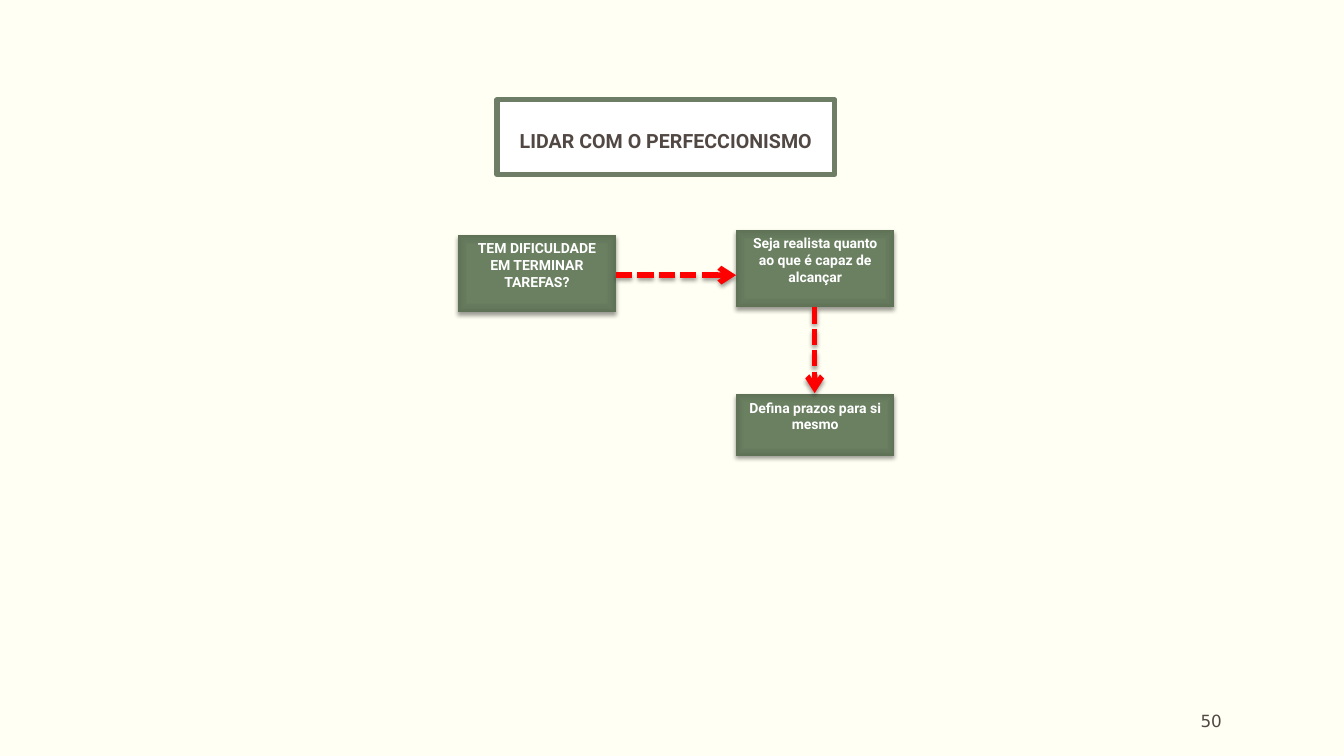
from lxml.etree import SubElement
from pptx import Presentation
from pptx.dml.color import RGBColor
from pptx.enum.dml import MSO_LINE
from pptx.enum.shapes import MSO_CONNECTOR, MSO_SHAPE
from pptx.enum.text import MSO_ANCHOR, MSO_AUTO_SIZE, PP_ALIGN
from pptx.oxml import parse_xml
from pptx.oxml.ns import nsdecls, qn
from pptx.util import Inches, Pt

COLORS = {
    "background": "FFFFF3", "white": "FFFFFF", "text": "514843",
    "frame": "6D7D66", "arrow": "FF0000", "shadow": "000000",
    "box_center": "6B8162", "box_middle": "6A8061", "box_edge": "5F7256",
}


def write_text(shape, text, size, color, font="Roboto", bold=True,
               align=PP_ALIGN.CENTER, anchor=MSO_ANCHOR.TOP):
    frame = shape.text_frame
    frame.word_wrap = True
    frame.auto_size = MSO_AUTO_SIZE.NONE
    frame.vertical_anchor = anchor
    paragraph = frame.paragraphs[0]
    paragraph.alignment = align
    run = paragraph.add_run()
    run.text = text
    run.font.name = font
    run.font.size = Pt(size)
    run.font.bold = bold
    run.font.color.rgb = RGBColor.from_string(COLORS[color])


def add_shadow(shape):
    shape._element.spPr.append(parse_xml(
        f'<a:effectLst {nsdecls("a")}>'
        f'<a:outerShdw blurRad="{Pt(3.1)}" dist="{Pt(2)}" dir="5400000" rotWithShape="0">'
        f'<a:srgbClr val="{COLORS["shadow"]}"><a:alpha val="38000"/></a:srgbClr>'
        '</a:outerShdw></a:effectLst>'))


presentation = Presentation()
presentation.slide_width = Inches(13.33)
presentation.slide_height = Inches(7.5)
slide = presentation.slides.add_slide(presentation.slide_layouts[5])
slide.background.fill.solid()
slide.background.fill.fore_color.rgb = RGBColor.from_string(COLORS["background"])

# Framed title
title = slide.shapes.title
title.left, title.top = Inches(4.93), Inches(0.99)
title.width, title.height = Inches(3.35), Inches(0.74)
title.fill.solid()
title.fill.fore_color.rgb = RGBColor.from_string(COLORS["white"])
title.line.color.rgb = RGBColor.from_string(COLORS["frame"])
title.line.width = Pt(3.78)
write_text(title, "LIDAR COM O PERFECCIONISMO", 14, "text", anchor=MSO_ANCHOR.MIDDLE)
title.text_frame.margin_top = Inches(0.13)

# Question and advice boxes
boxes = [
    (4.54, 2.33, 0.77, "TEM DIFICULDADE EM TERMINAR TAREFAS?"),
    (7.3, 2.28, 0.77, "Seja realista quanto ao que é capaz de alcançar"),
    (7.3, 3.91, 0.61, "Defina prazos para si mesmo"),
]
gradient_stops = "".join(
    f'<a:gs pos="{position}000"><a:srgbClr val="{COLORS[name]}"/></a:gs>'
    for position, name in ((0, "box_center"), (71, "box_middle"), (100, "box_edge")))
for left, top, height, text in boxes:
    box = slide.shapes.add_shape(MSO_SHAPE.RECTANGLE, Inches(left), Inches(top),
                                 Inches(1.57), Inches(height))
    box.fill.background()
    properties = box._element.spPr
    properties.replace(properties.find(qn("a:noFill")), parse_xml(
        f'<a:gradFill {nsdecls("a")} rotWithShape="1"><a:gsLst>{gradient_stops}</a:gsLst>'
        '<a:path path="rect"><a:fillToRect l="50000" t="50000" r="50000" b="50000"/></a:path>'
        '</a:gradFill>'))
    box.line.fill.background()
    add_shadow(box)
    write_text(box, text, 10, "white")

# Dashed arrows
for start_x, start_y, end_x, end_y in ((6.11, 2.73, 7.3, 2.73), (8.08, 3.05, 8.08, 3.9)):
    arrow = slide.shapes.add_connector(MSO_CONNECTOR.STRAIGHT, Inches(start_x),
                                       Inches(start_y), Inches(end_x), Inches(end_y))
    arrow.line.color.rgb = RGBColor.from_string(COLORS["arrow"])
    arrow.line.width = Pt(3.82)
    arrow.line.dash_style = MSO_LINE.SQUARE_DOT
    SubElement(arrow._element.spPr.find(qn("a:ln")), qn("a:tailEnd"), type="arrow")
    add_shadow(arrow)

# Slide number
number = slide.shapes.add_textbox(Inches(10.12), Inches(6.95), Inches(2), Inches(0.4))
number.text_frame.margin_left = number.text_frame.margin_right = 0
write_text(number, "50", 12, "text", font="DejaVu Sans", bold=False,
           align=PP_ALIGN.RIGHT, anchor=MSO_ANCHOR.MIDDLE)

presentation.save("out.pptx")
